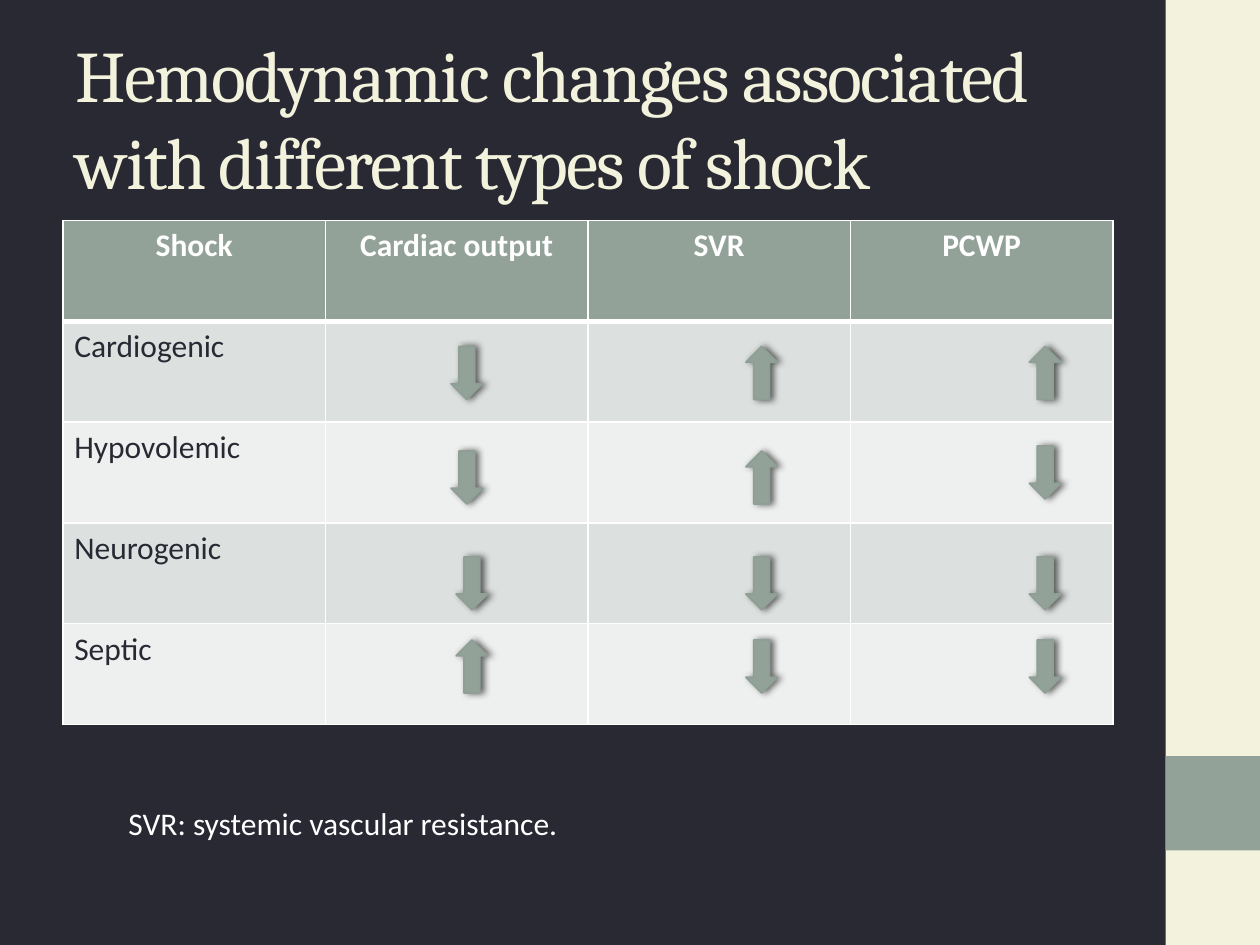
from lxml.etree import SubElement
from pptx import Presentation
from pptx.dml.color import RGBColor
from pptx.enum.shapes import MSO_SHAPE
from pptx.enum.text import MSO_ANCHOR, MSO_AUTO_SIZE, PP_ALIGN
from pptx.oxml import parse_xml
from pptx.oxml.ns import nsdecls, qn
from pptx.util import Inches, Pt

TITLE = "Hemodynamic changes associated with different types of shock"
NOTE = "SVR: systemic vascular resistance."
HEADINGS = ["Shock", "Cardiac output", "SVR", "PCWP"]
UP, DOWN = MSO_SHAPE.UP_ARROW, MSO_SHAPE.DOWN_ARROW
SHOCKS = [
    ("Cardiogenic", [DOWN, UP, UP]),
    ("Hypovolemic", [DOWN, UP, DOWN]),
    ("Neurogenic", [DOWN, DOWN, DOWN]),
    ("Septic", [UP, DOWN, DOWN]),
]
ARROW_LEFTS = [3.58, 5.92, 8.17]
ARROW_TOPS = [2.75, 3.58, 4.42, 5.08]
ARROW_NUDGES = {(1, 2): (0, -0.04), (2, 0): (0.04, 0), (3, 0): (0.04, 0)}
ARROW_SIZE = (0.25, 0.42)

NAVY = RGBColor(0x29, 0x29, 0x34)
CREAM = RGBColor(0xF3, 0xF2, 0xDC)
SAGE = RGBColor(0x93, 0xA2, 0x99)
SAGE_EDGE = RGBColor(0x8F, 0x9F, 0x96)
WHITE = RGBColor(0xFF, 0xFF, 0xFF)
BANDS = [RGBColor(0xDC, 0xE0, 0xDE), RGBColor(0xEE, 0xF0, 0xEF)]

WIDTH, HEIGHT = 10, 7.5
PANEL = 0.75
MARGIN = 0.5
CONTENT_WIDTH = WIDTH * 5 / 6
ROW_HEIGHT = 0.8


def inches(*lengths):
    return [Inches(length) for length in lengths]


def style(paragraph, font_name, size, color, bold=False):
    font = paragraph.font
    font.name, font.size, font.bold = font_name, Pt(size), bold
    font.color.rgb = color


def add_block(page, preset, place, color):
    block = page.shapes.add_shape(preset, *inches(*place))
    block.shadow.inherit = False
    block.fill.solid()
    block.fill.fore_color.rgb = color
    block.line.fill.background()
    return block


def add_arrow(page, preset, place):
    arrow = add_block(page, preset, place, SAGE)
    arrow.line.color.rgb = SAGE_EDGE
    arrow.line.width = Pt(1)
    effects = arrow._element.spPr.find(qn("a:effectLst"))
    effects.append(parse_xml(
        f'<a:outerShdw {nsdecls("a")} blurRad="{Pt(4)}" dist="{Pt(2)}" dir="0" rotWithShape="0">'
        '<a:srgbClr val="000000"><a:alpha val="60000"/></a:srgbClr></a:outerShdw>'))


def format_cell(cell, fill, bottom_width, top_width):
    properties = cell._tc.get_or_add_tcPr()
    widths = {"lnL": 1, "lnR": 1, "lnT": top_width, "lnB": bottom_width}
    for edge, width in widths.items():
        line = SubElement(properties, qn(f"a:{edge}"), w=str(Pt(width)))
        SubElement(SubElement(line, qn("a:solidFill")), qn("a:srgbClr"), val=str(WHITE))
    cell.fill.solid()
    cell.fill.fore_color.rgb = fill
    cell.margin_left = cell.margin_right = Inches(0.09)


def add_title(page):
    title = page.shapes.title
    title.left, title.top, title.width, title.height = inches(MARGIN, 0.3, CONTENT_WIDTH, 1.25)
    frame = title.text_frame
    frame.text = TITLE
    frame.word_wrap = True
    frame.auto_size = MSO_AUTO_SIZE.NONE
    frame.vertical_anchor = MSO_ANCHOR.MIDDLE
    para = frame.paragraphs[0]
    para.alignment = PP_ALIGN.LEFT
    style(para, "Cambria", 41.4, CREAM)
    para.runs[0].font._element.set("spc", "-100")


def add_shock_table(page):
    rows = [HEADINGS] + [[name, "", "", ""] for name, _ in SHOCKS]
    place = inches(MARGIN, 1.75, CONTENT_WIDTH, ROW_HEIGHT * len(rows))
    table = page.shapes.add_table(len(rows), len(HEADINGS), *place).table
    for row, texts in enumerate(rows):
        header = row == 0
        fill = SAGE if header else BANDS[(row - 1) % 2]
        for column, text in enumerate(texts):
            cell = table.cell(row, column)
            format_cell(cell, fill, 3 if header else 1, 3 if row == 1 else 1)
            cell.text = text
            para = cell.text_frame.paragraphs[0]
            para.alignment = PP_ALIGN.CENTER if header else PP_ALIGN.LEFT
            style(para, "Calibri", 18, WHITE if header else NAVY, header)


def add_arrows(page):
    for row, (_, presets) in enumerate(SHOCKS):
        for column, preset in enumerate(presets):
            right, down = ARROW_NUDGES.get((row, column), (0, 0))
            place = (ARROW_LEFTS[column] + right, ARROW_TOPS[row] + down, *ARROW_SIZE)
            add_arrow(page, preset, place)


def add_note(page):
    box = page.shapes.add_textbox(*inches(0.92, 6.33, CONTENT_WIDTH, 0.4))
    frame = box.text_frame
    frame.word_wrap = True
    frame.auto_size = MSO_AUTO_SIZE.SHAPE_TO_FIT_TEXT
    frame.text = NOTE
    style(frame.paragraphs[0], "Calibri", 18, WHITE)


def main():
    deck = Presentation()
    deck.slide_width, deck.slide_height = inches(WIDTH, HEIGHT)
    page = deck.slides.add_slide(deck.slide_layouts[5])
    page.background.fill.solid()
    page.background.fill.fore_color.rgb = NAVY
    panel_left = WIDTH - PANEL
    add_block(page, MSO_SHAPE.RECTANGLE, (panel_left, 0, PANEL, HEIGHT), CREAM)
    add_block(page, MSO_SHAPE.RECTANGLE, (panel_left, HEIGHT - 2 * PANEL, PANEL, PANEL), SAGE)
    add_title(page)
    add_shock_table(page)
    add_arrows(page)
    add_note(page)
    deck.save("out.pptx")


if __name__ == "__main__":
    main()
